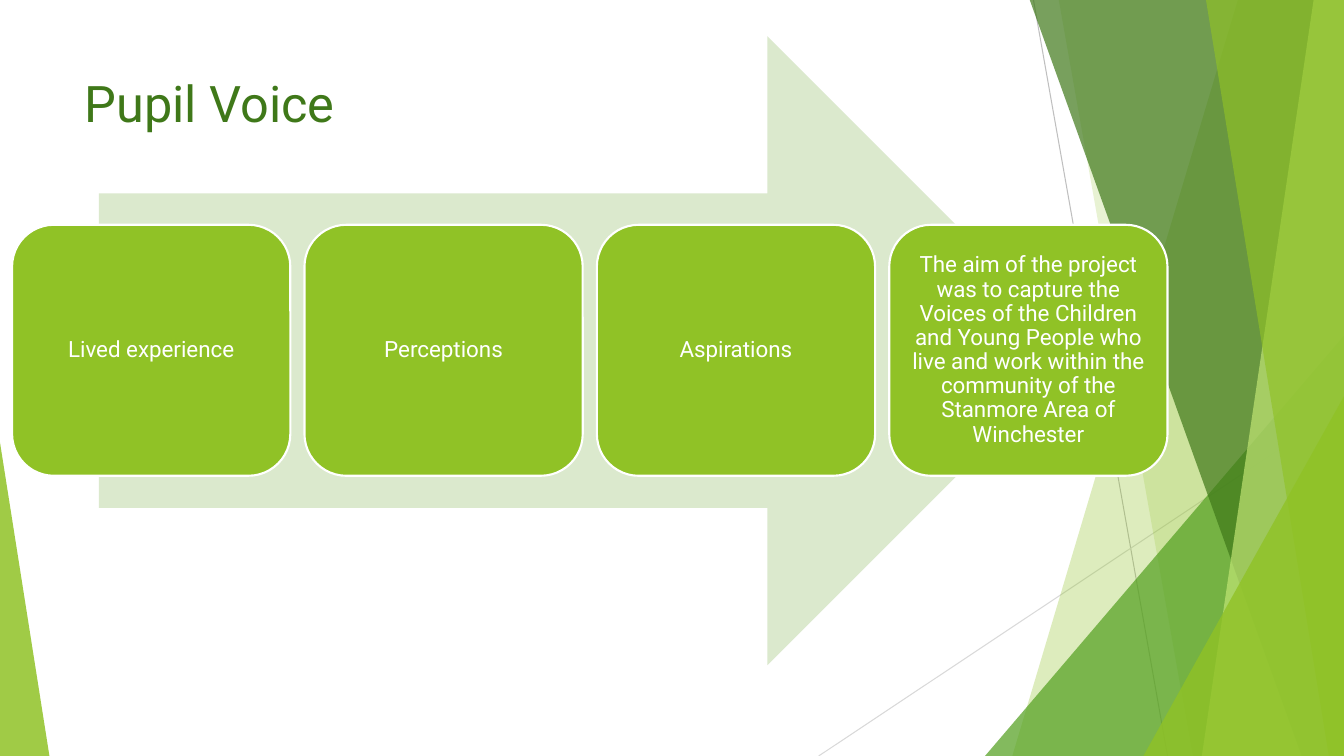
from lxml.etree import SubElement
from pptx import Presentation
from pptx.dml.color import RGBColor
from pptx.enum.shapes import MSO_CONNECTOR as Connector, MSO_SHAPE as Shape
from pptx.enum.text import MSO_ANCHOR as Anchor, PP_ALIGN as Align
from pptx.oxml.ns import qn
from pptx.util import Inches, Pt

WIDTH, HEIGHT = 13.33, 7.5
TOP = -0.01
LIME = RGBColor(0x90, 0xC2, 0x26)
LEAF = RGBColor(0x54, 0xA0, 0x21)
FOREST = RGBColor(0x3F, 0x78, 0x19)
PALE_LIME = RGBColor(0xC0, 0xE4, 0x74)
PALE_GREEN = RGBColor(0xDB, 0xE9, 0xCD)
GREY = RGBColor(0xBF, 0xBF, 0xBF)
LIGHT_GREY = RGBColor(0xD9, 0xD9, 0xD9)
WHITE = RGBColor(0xFF, 0xFF, 0xFF)


class SlideBuilder:
    font = "Roboto"

    def __init__(self, slide):
        self.shapes = slide.shapes

    def paint(self, shape, color, opacity=100):
        shape.shadow.inherit = False
        shape.fill.solid()
        shape.fill.fore_color.rgb = color
        shape.line.fill.background()
        if opacity < 100:
            srgb = shape._element.spPr.find(qn("a:solidFill"))[0]
            SubElement(srgb, qn("a:alpha")).set("val", str(opacity * 1000))

    def label(self, shape, text, size, color, align, anchor):
        frame = shape.text_frame
        frame.text = text
        frame.word_wrap = True
        frame.vertical_anchor = anchor
        paragraph = frame.paragraphs[0]
        paragraph.alignment = align
        font = paragraph.runs[0].font
        font.name = self.font
        font.size = Pt(size)
        font.color.rgb = color
        return paragraph

    def line(self, start, end, color):
        connector = self.shapes.add_connector(
            Connector.STRAIGHT, *map(Inches, start + end))
        connector.line.color.rgb = color
        connector.line.width = Pt(0.75)
        SubElement(connector._element.spPr, qn("a:effectLst"))

    def band(self, top_left, bottom_left, color, opacity):
        corners = [(top_left, TOP), (WIDTH, TOP), (WIDTH, HEIGHT), (bottom_left, HEIGHT)]
        points = [(Inches(x), Inches(y)) for x, y in corners]
        outline = self.shapes.build_freeform(*points[0])
        outline.add_line_segments(points[1:], close=True)
        self.paint(outline.convert_to_shape(), color, opacity)

    def preset(self, kind, box, color, opacity=100):
        shape = self.shapes.add_shape(kind, *map(Inches, box))
        self.paint(shape, color, opacity)
        return shape

    def triangle(self, left, top, width, apex, color, opacity):
        box = (left, top, width, HEIGHT - top)
        shape = self.preset(Shape.ISOSCELES_TRIANGLE, box, color, opacity)
        shape.adjustments[0] = apex

    def title(self, text, box):
        heading = self.shapes.add_textbox(*map(Inches, box))
        self.label(heading, text, 36, FOREST, Align.LEFT, Anchor.TOP)

    def card(self, text, box):
        card = self.preset(Shape.ROUNDED_RECTANGLE, box, LIME)
        card.line.color.rgb = WHITE
        card.line.width = Pt(1.5)
        frame = card.text_frame
        frame.margin_left = frame.margin_right = Inches(0.07)
        frame.margin_top = frame.margin_bottom = Inches(0.07)
        paragraph = self.label(card, text, 16, WHITE, Align.CENTER, Anchor.MIDDLE)
        paragraph.line_spacing = 0.9


def main():
    deck = Presentation()
    deck.slide_width, deck.slide_height = Inches(WIDTH), Inches(HEIGHT)
    builder = SlideBuilder(deck.slides.add_slide(deck.slide_layouts[6]))

    builder.line((10.25, 0), (11.58, HEIGHT), GREY)
    builder.line((WIDTH, 4.03), (8.12, HEIGHT), LIGHT_GREY)
    builder.band(12.28, 10.04, LIME, 30)
    builder.band(10.5, 11.83, LIME, 20)
    builder.triangle(9.77, 3.33, 3.56, 1, LEAF, 72)
    builder.band(10.21, 12.91, FOREST, 70)
    builder.band(13.03, 11.92, PALE_LIME, 70)
    builder.band(11.96, 13.18, LIME, 65)
    builder.triangle(11.34, 3.93, 1.99, 1, LIME, 80)
    builder.triangle(0, 4.39, 0.49, 0, LIME, 85)

    builder.title("Pupil Voice", (0.74, 0.67, 9.4, 1.04))
    builder.preset(Shape.RIGHT_ARROW, (0.98, 0.36, 9.75, 6.24), PALE_GREEN)

    themes = [
        "Lived experience",
        "Perceptions",
        "Aspirations",
        "The aim of the project was to capture the Voices of the Children and "
        "Young People who live and work within the community of the "
        "Stanmore Area of Winchester",
    ]
    for index, theme in enumerate(themes):
        builder.card(theme, (0.12 + 2.9 * index, 2.23, 2.76, 2.49))

    deck.save("out.pptx")


if __name__ == "__main__":
    main()
